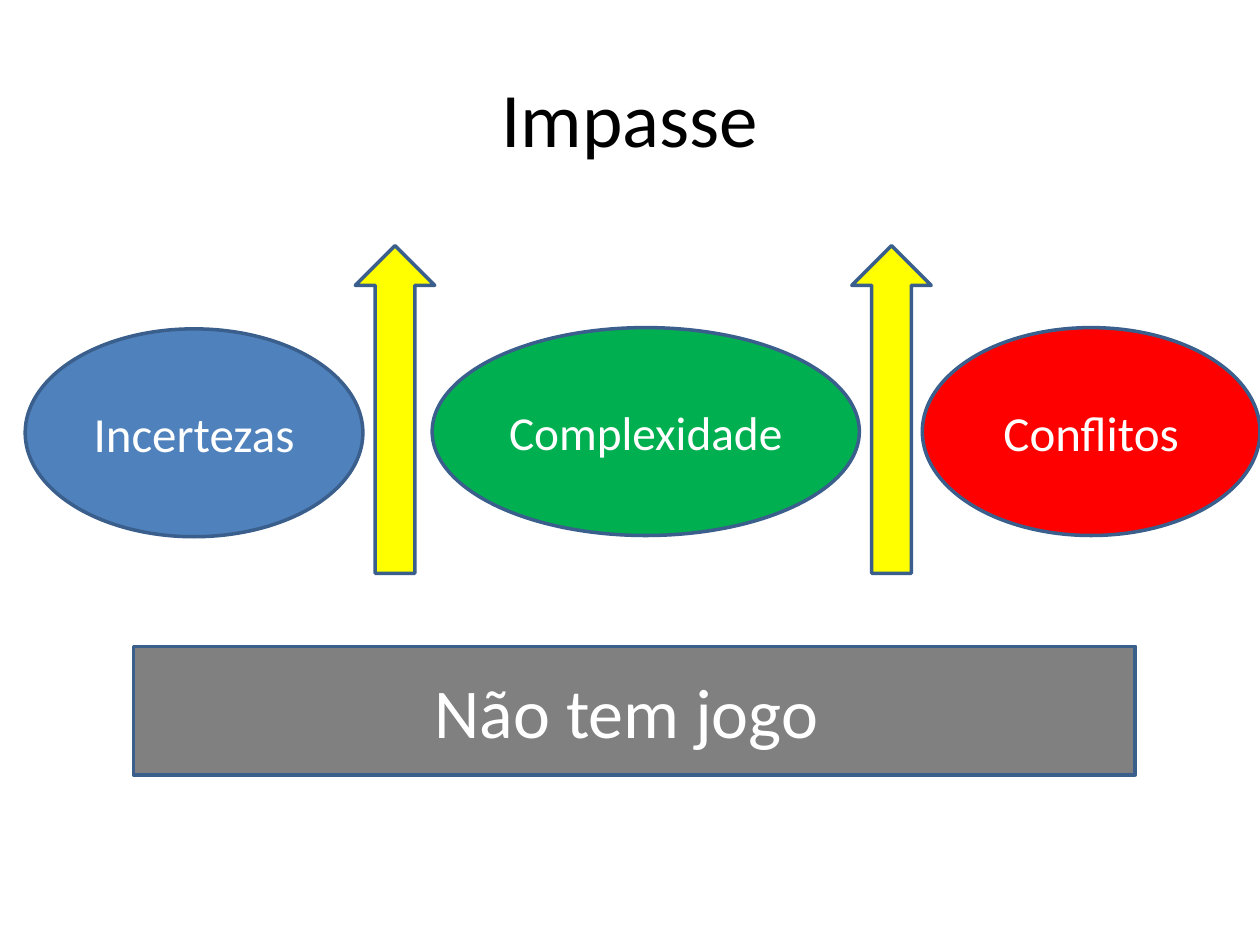
from pptx import Presentation
from pptx.dml.color import RGBColor
from pptx.enum.shapes import MSO_SHAPE
from pptx.enum.text import MSO_ANCHOR, PP_ALIGN
from pptx.util import Inches, Pt


def write(shape, text, size=28, color="FFFFFF"):
    frame = shape.text_frame
    frame.word_wrap = True
    frame.vertical_anchor = MSO_ANCHOR.MIDDLE
    para = frame.paragraphs[0]
    para.alignment = PP_ALIGN.CENTER
    run = para.add_run()
    run.text = text
    run.font.name = "Calibri"
    run.font.size = Pt(size)
    run.font.color.rgb = RGBColor.from_string(color)


def draw(kind, left, top, width, height, fill):
    shape = slide.shapes.add_shape(
        kind, Inches(left), Inches(top), Inches(width), Inches(height))
    shape.shadow.inherit = False
    shape.fill.solid()
    shape.fill.fore_color.rgb = RGBColor.from_string(fill)
    shape.line.color.rgb = RGBColor.from_string("3A5F8C")
    shape.line.width = Pt(2)
    return shape


deck = Presentation()
deck.slide_width, deck.slide_height = Inches(10), Inches(7.5)
slide = deck.slides.add_slide(deck.slide_layouts[5])

title = slide.shapes.title
title.left, title.top = Inches(0.5), Inches(0.3)
title.width, title.height = Inches(9), Inches(1.25)
write(title, "Impasse", size=44, color="000000")

for text, left, top, width, fill, size in [
    ("Incertezas", 0.2, 2.61, 2.68, "4F81BD", 28),
    ("Conflitos", 7.32, 2.6, 2.68, "FF0000", 28),
    ("Complexidade", 3.43, 2.6, 3.39, "00B050", 27),
]:
    oval = draw(MSO_SHAPE.OVAL, left, top, width, 1.65, fill)
    write(oval, text, size=size)

bar = draw(MSO_SHAPE.RECTANGLE, 1.06, 5.13, 7.95, 1.02, "808080")
write(bar, "Não tem jogo ", size=40)

for left in (2.82, 6.76):
    arrow = draw(MSO_SHAPE.DOWN_ARROW, left, 1.95, 0.63, 2.6, "FFFF00")
    arrow.rotation = 180

deck.save("out.pptx")
